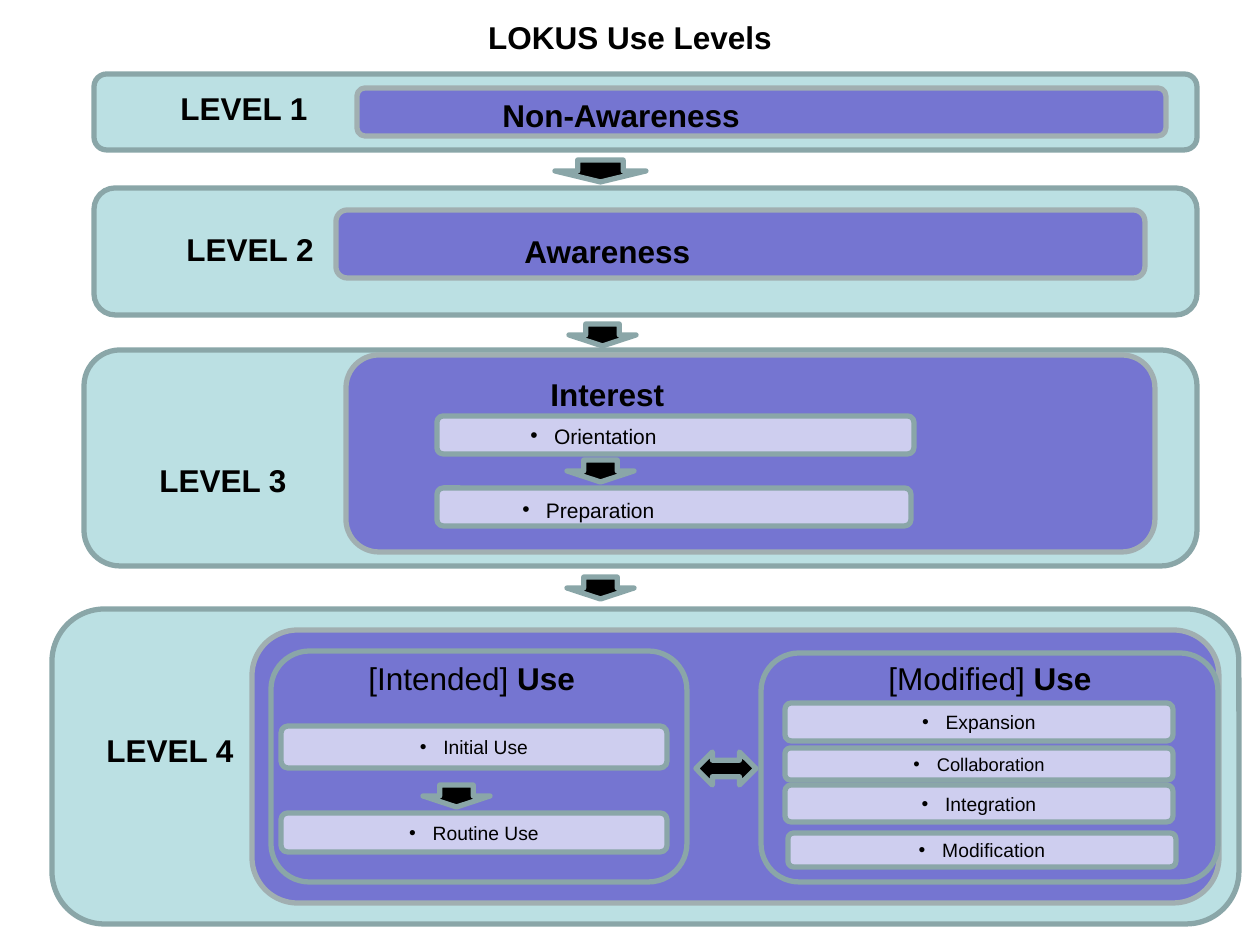
"""Build the LOKUS use levels slide."""
from lxml.etree import SubElement
from pptx import Presentation
from pptx.dml.color import RGBColor
from pptx.enum.shapes import MSO_SHAPE as Shape
from pptx.enum.text import MSO_ANCHOR as Anchor, PP_ALIGN as Align
from pptx.oxml.ns import qn
from pptx.util import Emu, Pt

SCALE = 914400 / 126
BLACK = RGBColor(0x00, 0x00, 0x00)
TEAL = RGBColor(0xBB, 0xE0, 0xE3)
VIOLET = RGBColor(0x75, 0x75, 0xD1)
LILAC = RGBColor(0xCE, 0xCE, 0xEF)
EDGE = RGBColor(0x8A, 0xA6, 0xA8)
PALE_EDGE = RGBColor(0xA1, 0xAF, 0xB1)

TITLE = ("LOKUS Use Levels", (63, -42, 1134, 158))
LEVEL_PANELS = [(94, 74, 1103, 76), (94, 188, 1103, 127),
                (84, 350, 1113, 216), (52, 609, 1187, 315)]
STAGE_PANELS = [(357, 88, 809, 48), (336, 210, 809, 68),
                (346, 355, 809, 197), (252, 630, 967, 273)]
USE_PANELS = [(271, 651, 416, 231), (761, 653, 457, 229)]
STEP_BARS = [
    ("", (437, 416, 477, 38), 12),
    ("", (437, 488, 474, 38), 12),
    ("Initial Use", (281, 726, 386, 42), 11),
    ("Routine Use", (281, 813, 386, 39), 11),
    ("Expansion", (785, 703, 388, 38), 11),
    ("Modification", (788, 833, 388, 34), 11),
    ("Integration", (785, 785, 388, 37), 11),
    ("Collaboration", (785, 748, 388, 32), 10.5),
]
DOWN_ARROWS = [(555, 160, 91, 22), (569, 324, 67, 22), (567, 460, 67, 22),
               (567, 577, 67, 22), (423, 785, 67, 22)]
TWO_WAY_ARROWS = [(696, 752, 60, 33)]
HEADINGS = [
    ("", "LEVEL 1", (168, 83, 227, 53)),
    ("", "LEVEL 2", (174, 224, 158, 53)),
    ("", "LEVEL 3", (147, 455, 189, 50)),
    ("", "LEVEL 4", (94, 725, 189, 50)),
    ("", "Non-Awareness", (490, 90, 770, 50)),
    ("", "Awareness", (512, 226, 748, 50)),
    ("", "Interest", (538, 369, 347, 50)),
    ("[Intended] ", "Use", (356, 653, 237, 50)),
    ("[Modified] ", "Use", (876, 653, 237, 50)),
]
STEP_LABELS = [("Orientation", (518, 417, 425, 38)),
               ("Preparation", (510, 491, 404, 38))]


def place(frame):
    return [Emu(round(value * SCALE)) for value in frame]


def add_block(slide, kind, frame, fill, edge=EDGE):
    block = slide.shapes.add_shape(kind, *place(frame))
    block.shadow.inherit = False
    block.fill.solid()
    block.fill.fore_color.rgb = fill
    block.line.color.rgb = edge
    block.line.width = Pt(3)
    return block


def add_text_box(slide, frame):
    box = slide.shapes.add_textbox(*place(frame))
    box.text_frame.word_wrap = True
    return box


def style(para, size, align=Align.LEFT, bold=None):
    para.alignment = align
    font = para.font
    font.name, font.size, font.bold = "Arial", Pt(size), bold
    font.color.rgb = BLACK


def write_bullet(shape, text, size, align):
    para = shape.text_frame.paragraphs[0]
    para.text = text
    properties = para._p.get_or_add_pPr()
    properties.set("marL", "171450")
    properties.set("indent", "-171450")
    SubElement(properties, qn("a:buFont"), typeface="Arial")
    SubElement(properties, qn("a:buChar"), char="•")
    style(para, size, align)


def write_title(slide):
    text, frame = TITLE
    title = slide.shapes.title
    title.left, title.top, title.width, title.height = place(frame)
    title.text_frame.text = text
    title.text_frame.vertical_anchor = Anchor.MIDDLE
    style(title.text_frame.paragraphs[0], 18, Align.CENTER, True)


def main():
    deck = Presentation()
    deck.slide_width, deck.slide_height = place((1260, 945))
    slide = deck.slides.add_slide(deck.slide_layouts[5])
    write_title(slide)
    for level, stage in zip(LEVEL_PANELS, STAGE_PANELS):
        add_block(slide, Shape.ROUNDED_RECTANGLE, level, TEAL)
        add_block(slide, Shape.ROUNDED_RECTANGLE, stage, VIOLET, PALE_EDGE)
    for frame in USE_PANELS:
        add_block(slide, Shape.ROUNDED_RECTANGLE, frame, VIOLET)
    for text, frame, size in STEP_BARS:
        bar = add_block(slide, Shape.ROUNDED_RECTANGLE, frame, LILAC)
        if text:
            bar.text_frame.vertical_anchor = Anchor.MIDDLE
            write_bullet(bar, text, size, Align.CENTER)
    for kind, frames in ((Shape.DOWN_ARROW, DOWN_ARROWS),
                         (Shape.LEFT_RIGHT_ARROW, TWO_WAY_ARROWS)):
        for frame in frames:
            add_block(slide, kind, frame, BLACK)
    for prefix, text, frame in HEADINGS:
        para = add_text_box(slide, frame).text_frame.paragraphs[0]
        style(para, 18, bold=not prefix)
        if prefix:
            para.add_run().text = prefix
        span = para.add_run()
        span.text = text
        span.font.bold = True
    for text, frame in STEP_LABELS:
        write_bullet(add_text_box(slide, frame), text, 12, Align.LEFT)
    deck.save("out.pptx")


if __name__ == "__main__":
    main()
